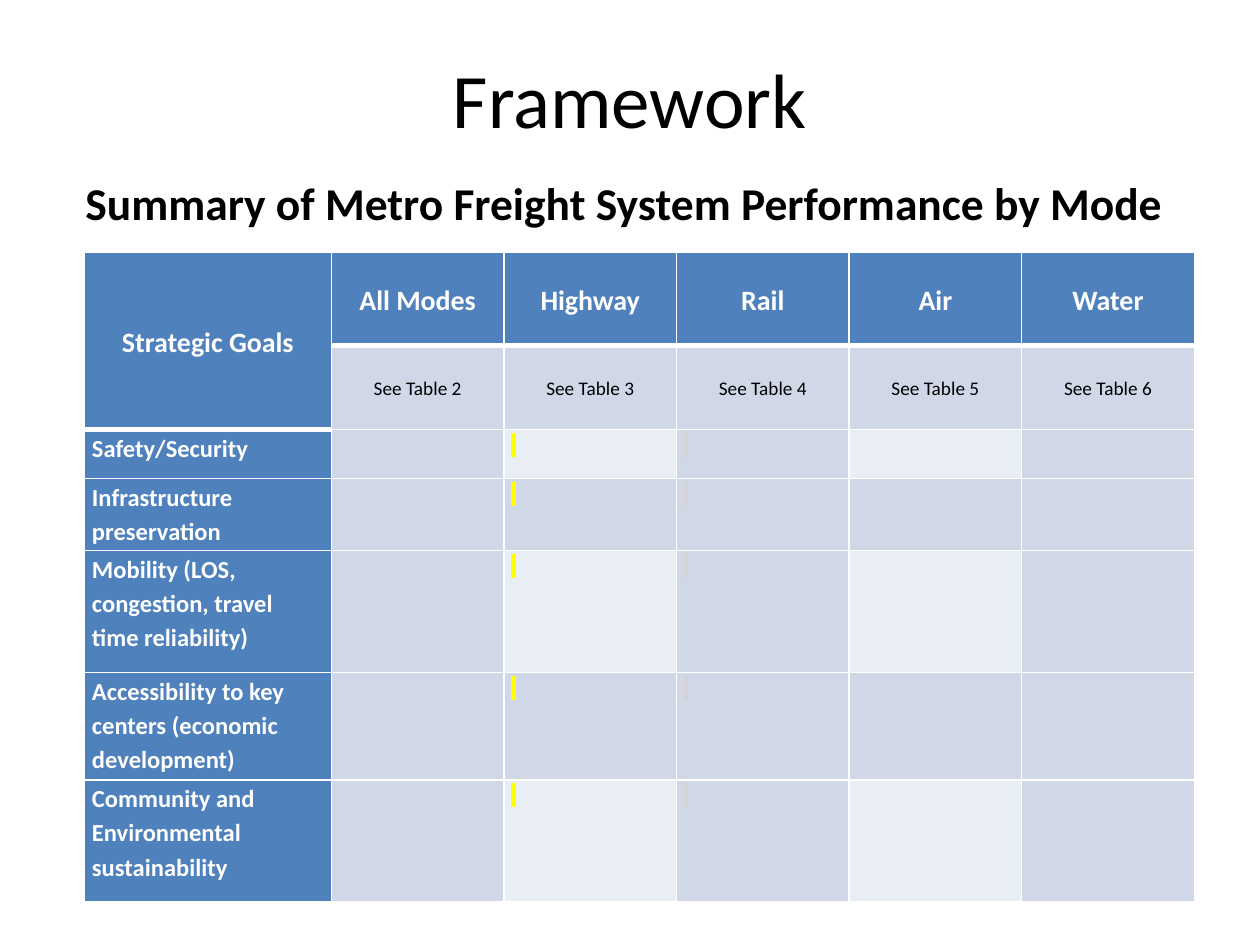
from lxml.etree import SubElement
from pptx import Presentation
from pptx.dml.color import RGBColor
from pptx.enum.text import MSO_ANCHOR as ANCHOR, PP_ALIGN as ALIGN
from pptx.oxml.ns import qn
from pptx.util import Inches, Pt

BLACK = RGBColor(0x00, 0x00, 0x00)
WHITE = RGBColor(0xFF, 0xFF, 0xFF)
BLUE = RGBColor(0x4F, 0x81, 0xBD)
BAND = RGBColor(0xD0, 0xD8, 0xE8)
LIGHT = RGBColor(0xE9, 0xED, 0xF4)
YELLOW = RGBColor(0xFF, 0xFF, 0x00)
GRAY = RGBColor(0xD3, 0xD3, 0xD3)

FONT = "Calibri"
MODES = ["All Modes", "Highway", "Rail", "Air", "Water"]
GOALS = [
    "Safety/Security",
    "Infrastructure preservation",
    "Mobility (LOS, congestion, travel time reliability)",
    "Accessibility to key centers (economic development)",
    "Community and Environmental sustainability",
]
COL_WIDTHS = [1.96] + [1.37] * len(MODES)
ROW_HEIGHTS = [0.74, 0.67, 0.39, 0.57, 0.97, 0.85, 0.97]
MARKS = {2: YELLOW, 3: GRAY}


def format_paragraph(p, size, color, bold=False, align=ALIGN.LEFT):
    """Set the font and alignment of a paragraph."""
    p.alignment = align
    p.font.name = FONT
    p.font.size = Pt(size)
    p.font.bold = bold
    p.font.color.rgb = color


def add_title(s, text):
    """Fill and place the title placeholder."""
    sp = s.shapes.title
    sp.left, sp.top, sp.width, sp.height = map(Inches, (0.5, 0.3, 9, 0.95))
    tf = sp.text_frame
    tf.text = text
    tf.vertical_anchor = ANCHOR.MIDDLE
    format_paragraph(tf.paragraphs[0], 44, BLACK, align=ALIGN.CENTER)


def add_subtitle(s, text):
    """Add the bold line above the table."""
    sp = s.shapes.add_textbox(Inches(0.58), Inches(1.34), Inches(8.92), Inches(0.6))
    tf = sp.text_frame
    tf.word_wrap = True
    tf.text = text
    format_paragraph(tf.paragraphs[0], 26, BLACK, bold=True)


def set_borders(cell, top=1, bottom=1):
    """Draw white borders of the given top and bottom widths in points."""
    tc_pr = cell._tc.get_or_add_tcPr()
    widths = {"a:lnL": 1, "a:lnR": 1, "a:lnT": top, "a:lnB": bottom}
    for i, (tag, width) in enumerate(widths.items()):
        ln = SubElement(tc_pr, qn(tag), w=str(Pt(width)))
        fill = SubElement(ln, qn("a:solidFill"))
        SubElement(fill, qn("a:srgbClr"), val=str(WHITE))
        tc_pr.remove(ln)
        tc_pr.insert(i, ln)


def style_cell(cell, text, fill, size, color, bold=False, centered=False):
    """Set the text, fill, margins and font of a table cell."""
    cell.text = text
    cell.margin_left = cell.margin_right = Inches(0.06)
    cell.margin_top = cell.margin_bottom = 0
    cell.vertical_anchor = ANCHOR.MIDDLE if centered else ANCHOR.TOP
    cell.fill.solid()
    cell.fill.fore_color.rgb = fill
    p = cell.text_frame.paragraphs[0]
    p.line_spacing = 1.15
    format_paragraph(p, size, color, bold, ALIGN.CENTER if centered else ALIGN.LEFT)


def add_mark(cell, color):
    """Add a highlighted space to a cell as a rating mark."""
    r = cell.text_frame.paragraphs[0].add_run()
    r.text = " "
    r.font.size = Pt(11)
    highlight = SubElement(r._r.get_or_add_rPr(), qn("a:highlight"))
    SubElement(highlight, qn("a:srgbClr"), val=str(color))


def add_goal_row(table, row, goal):
    """Fill one goal row with its label, banded cells and marks."""
    style_cell(table.cell(row, 0), goal, BLUE, 14, WHITE, bold=True)
    for col in range(1, len(COL_WIDTHS)):
        fill = LIGHT if row % 2 == 0 and col % 2 == 0 else BAND
        cell = table.cell(row, col)
        style_cell(cell, "", fill, 11, BLACK)
        if col in MARKS:
            add_mark(cell, MARKS[col])


def add_goals_table(s):
    """Add the table of strategic goals by mode."""
    frame = s.shapes.add_table(
        len(ROW_HEIGHTS), len(COL_WIDTHS), Inches(0.67), Inches(2),
        Inches(sum(COL_WIDTHS)), Inches(sum(ROW_HEIGHTS)))
    table = frame.table
    table.first_row = table.horz_banding = False
    for column, width in zip(table.columns, COL_WIDTHS):
        column.width = Inches(width)
    for row, height in zip(table.rows, ROW_HEIGHTS):
        row.height = Inches(height)

    table.cell(0, 0).merge(table.cell(1, 0))
    for col, head in enumerate(["Strategic Goals"] + MODES):
        style_cell(table.cell(0, col), head, BLUE, 16, WHITE, True, True)
    for col in range(1, len(COL_WIDTHS)):
        style_cell(table.cell(1, col), f"See Table {col + 1}", BAND, 11, BLACK,
                   centered=True)
    for row, goal in enumerate(GOALS, start=2):
        add_goal_row(table, row, goal)

    for row in range(len(ROW_HEIGHTS)):
        for col in range(len(COL_WIDTHS)):
            thick_top = row == (1 if col else 2)
            thick_bottom = row == 0 or (row == 1 and col == 0)
            set_borders(table.cell(row, col), 3 if thick_top else 1,
                        3 if thick_bottom else 1)


def main():
    """Build the slide and save it."""
    prs = Presentation()
    prs.slide_width, prs.slide_height = Inches(10), Inches(7.5)
    s = prs.slides.add_slide(prs.slide_layouts[5])
    add_title(s, "Framework")
    add_subtitle(s, "Summary of Metro Freight System Performance by Mode")
    add_goals_table(s)
    prs.save("out.pptx")


if __name__ == "__main__":
    main()
